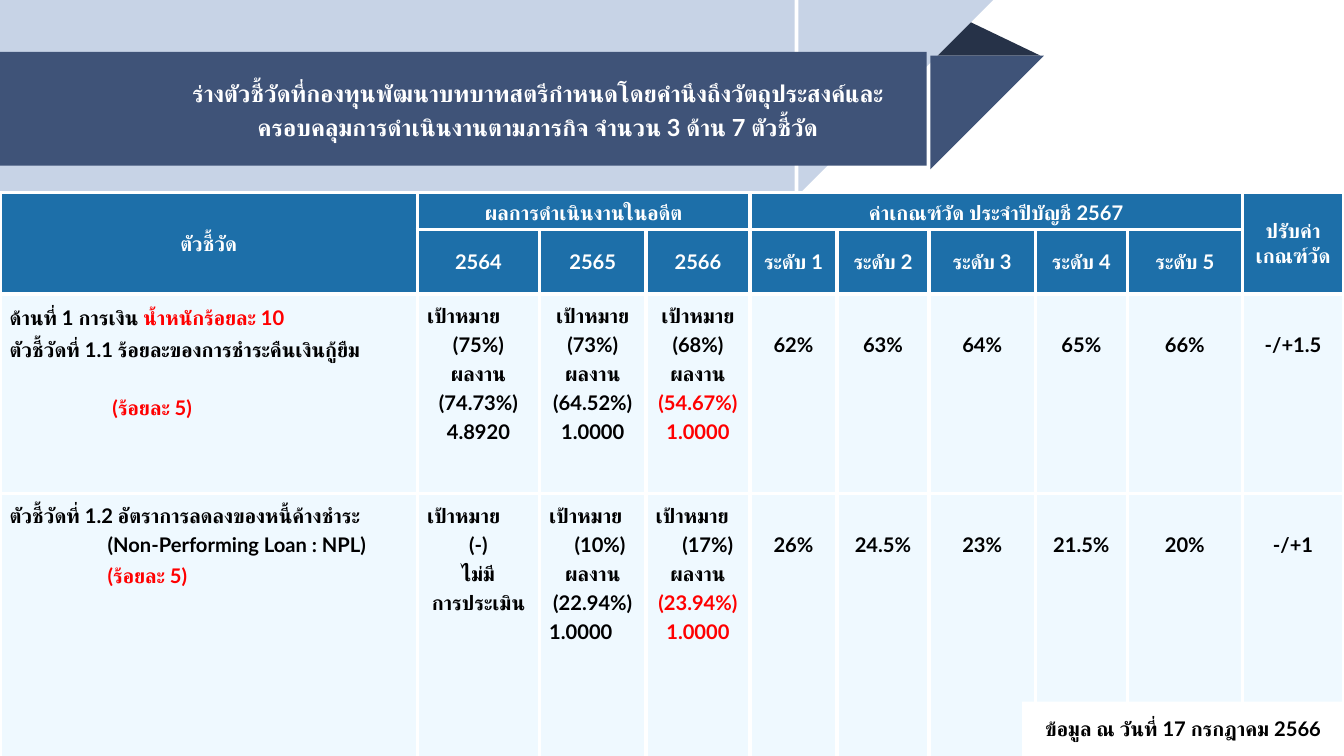
from dataclasses import dataclass

from lxml import etree
from pptx import Presentation
from pptx.dml.color import RGBColor
from pptx.enum.shapes import MSO_SHAPE
from pptx.enum.text import MSO_ANCHOR, PP_ALIGN
from pptx.oxml.ns import qn
from pptx.util import Inches, Pt

RECTANGLE = MSO_SHAPE.RECTANGLE
TRIANGLE = MSO_SHAPE.ISOSCELES_TRIANGLE
RIGHT_TRIANGLE = MSO_SHAPE.RIGHT_TRIANGLE
LEFT, CENTER = PP_ALIGN.LEFT, PP_ALIGN.CENTER
TOP, MIDDLE, BOTTOM = MSO_ANCHOR.TOP, MSO_ANCHOR.MIDDLE, MSO_ANCHOR.BOTTOM


@dataclass(frozen=True)
class Theme:
    font: str = "Lato"
    title_size: int = 14
    body_size: int = 12
    border_width: float = 2.25
    white: str = "FFFFFF"
    black: str = "000000"
    red: str = "FF0000"
    pale_blue: str = "C7D3E6"
    banner_blue: str = "3F5378"
    fold_blue: str = "263248"
    header_blue: str = "1D6FA9"
    cell_blue: str = "EFF9FF"


THEME = Theme()


@dataclass(frozen=True)
class Line:
    text: str
    color: str = THEME.black
    red_tail: str = ""
    align: int = CENTER
    indent: float = 0
    before: int = 0
    spacing: float = 1.2


# The grid has ten columns and ten rows to the inch
def grid(count):
    return Inches(count / 10)


COLUMN_WIDTHS = [34.5, 10.1, 8.8, 8.6, 7.2, 7.6, 8.8, 7.6, 9.5, 8.4]
ROW_HEIGHTS = [3.1, 5.3, 16.5, 21.8]
TABLE_TOP = 15.9
LEVEL_TOP_MARGIN = 2.8

# First row, last row, first column, last column, text, anchor
MERGED_HEADERS = [
    (0, 1, 0, 0, "ตัวชี้วัด", MIDDLE),
    (0, 0, 1, 3, "ผลการดำเนินงานในอดีต", BOTTOM),
    (0, 0, 4, 8, "ค่าเกณฑ์วัด ประจำปีบัญชี 2567", BOTTOM),
    (0, 1, 9, 9, "ปรับค่าเกณฑ์วัด", MIDDLE),
]
SUBHEADERS = ["2564", "2565", "2566"] + [f"ระดับ {level}" for level in range(1, 6)]

TARGET, RESULT = "เป้าหมาย", "ผลงาน"
LEFT_TARGET = Line(TARGET, align=LEFT)


def centered(*texts, color=THEME.black):
    return [Line(text, color) for text in texts]


INDICATORS = [
    (
        [
            Line("ด้านที่ 1 การเงิน ", red_tail="น้ำหนักร้อยละ 10", align=LEFT, spacing=1.3),
            Line("ตัวชี้วัดที่ 1.1 ร้อยละของการชำระคืนเงินกู้ยืม", align=LEFT, spacing=1.3),
            Line("(ร้อยละ 5)", THEME.red, align=LEFT, indent=8.5, before=16, spacing=1.3),
        ],
        [LEFT_TARGET, *centered("(75%)", RESULT, "(74.73%)", "4.8920")],
        centered(TARGET, "(73%)", RESULT, "(64.52%)", "1.0000"),
        centered(TARGET, "(68%)", RESULT) + centered("(54.67%)", "1.0000", color=THEME.red),
        ["62%", "63%", "64%", "65%", "66%", "-/+1.5"],
    ),
    (
        [
            Line("ตัวชี้วัดที่ 1.2 อัตราการลดลงของหนี้ค้างชำระ", align=LEFT),
            Line("(Non-Performing Loan : NPL)", align=LEFT, indent=8.1),
            Line("(ร้อยละ 5)", THEME.red, align=LEFT, indent=8.1, spacing=1.3),
        ],
        [LEFT_TARGET, *centered("(-)", "ไม่มี", "การประเมิน")],
        [LEFT_TARGET, Line("(10%)", align=LEFT, indent=2.1),
         *centered(RESULT, "(22.94%)"), Line("1.0000", align=LEFT)],
        [LEFT_TARGET, Line("(17%)", align=LEFT, indent=2.2), *centered(RESULT),
         *centered("(23.94%)", "1.0000", color=THEME.red)],
        ["26%", "24.5%", "23%", "21.5%", "20%", "-/+1"],
    ),
]


def format_run(run, color, size):
    run.font.name = THEME.font
    run.font.size = Pt(size)
    run.font.bold = True
    run.font.color.rgb = RGBColor.from_string(color)
    # Thai text takes its typeface from the complex-script setting
    etree.SubElement(run.font._element, qn("a:cs"), typeface=THEME.font)


def write_lines(text_frame, lines, size=THEME.body_size):
    for index, line in enumerate(lines):
        paragraph = text_frame.add_paragraph() if index else text_frame.paragraphs[0]
        paragraph.text = line.text
        paragraph.alignment = line.align
        paragraph.line_spacing = line.spacing
        if line.before:
            paragraph.space_before = Pt(line.before)
        if line.indent:
            properties = paragraph._p.get_or_add_pPr()
            properties.set("marL", str(grid(line.indent)))
            properties.set("indent", "0")
        format_run(paragraph.runs[0], line.color, size)
        if line.red_tail:
            tail = paragraph.add_run()
            tail.text = line.red_tail
            format_run(tail, THEME.red, size)


def add_block(slide, kind, left, top, width, height, color, rotation=0):
    shape = slide.shapes.add_shape(kind, grid(left), grid(top), grid(width), grid(height))
    shape.shadow.inherit = False
    shape.fill.solid()
    shape.fill.fore_color.rgb = RGBColor.from_string(color)
    shape.line.fill.background()
    shape.rotation = rotation
    return shape


def style_cell(cell, color):
    properties = cell._tc.get_or_add_tcPr()
    for side in ("a:lnL", "a:lnR", "a:lnT", "a:lnB"):
        border = etree.SubElement(properties, qn(side), w=str(Pt(THEME.border_width)))
        fill = etree.SubElement(border, qn("a:solidFill"))
        etree.SubElement(fill, qn("a:srgbClr"), val=THEME.white)
    cell.fill.solid()
    cell.fill.fore_color.rgb = RGBColor.from_string(color)
    cell.margin_left = cell.margin_right = grid(0.8)
    cell.margin_top = cell.margin_bottom = grid(0.4)


def write_cell(cell, lines, anchor=TOP):
    cell.vertical_anchor = anchor
    write_lines(cell.text_frame, lines)


def add_banner(slide):
    fold = add_block(slide, TRIANGLE, 76.5, 1.5, 9.5, 3.1, THEME.fold_blue)
    fold.adjustments[0] = 0.32
    # Each band is a rectangle with a right triangle as its tip
    add_block(slide, RECTANGLE, -0.3, -0.3, 66, 16.1, THEME.pale_blue)
    add_block(slide, RIGHT_TRIANGLE, 66, 0, 16.1, 16.1, THEME.pale_blue, 90)
    add_block(slide, RECTANGLE, 0, 4.3, 76.6, 9.4, THEME.banner_blue)
    add_block(slide, RIGHT_TRIANGLE, 76.9, 4.6, 9.4, 9.4, THEME.banner_blue, 90)


def add_title(slide, text):
    box = slide.shapes.add_textbox(grid(13.9), grid(4.3), grid(61.1), grid(9.2))
    text_frame = box.text_frame
    text_frame.word_wrap = True
    text_frame.vertical_anchor = MIDDLE
    text_frame.margin_left = text_frame.margin_right = grid(0.8)
    text_frame.margin_top = text_frame.margin_bottom = grid(0.8)
    write_lines(text_frame, [Line(text, THEME.white)], THEME.title_size)


def add_indicator_table(slide):
    table = slide.shapes.add_table(
        len(ROW_HEIGHTS), len(COLUMN_WIDTHS), 0, grid(TABLE_TOP),
        grid(sum(COLUMN_WIDTHS)), grid(sum(ROW_HEIGHTS))).table
    for column, width in zip(table.columns, COLUMN_WIDTHS):
        column.width = grid(width)
    for index, (row, height) in enumerate(zip(table.rows, ROW_HEIGHTS)):
        row.height = grid(height)
        for cell in row.cells:
            style_cell(cell, THEME.header_blue if index < 2 else THEME.cell_blue)
    # Headers
    for first_row, last_row, first, last, text, anchor in MERGED_HEADERS:
        cell = table.cell(first_row, first)
        cell.merge(table.cell(last_row, last))
        write_cell(cell, [Line(text, THEME.white, spacing=1)], anchor)
    for column, text in enumerate(SUBHEADERS, 1):
        write_cell(table.cell(1, column), [Line(text, THEME.white, spacing=1)], MIDDLE)
    # Indicators, past results and levels
    for row, (*descriptions, levels) in enumerate(INDICATORS, 2):
        for column, lines in enumerate(descriptions):
            write_cell(table.cell(row, column), lines)
        for column, level in enumerate(levels, len(descriptions)):
            cell = table.cell(row, column)
            cell.margin_top = grid(LEVEL_TOP_MARGIN)
            write_cell(cell, centered(level))


def add_date_note(slide, text):
    note = add_block(slide, RECTANGLE, 84.5, 58, 26.6, 4.5, THEME.white)
    note.text_frame.word_wrap = True
    note.text_frame.vertical_anchor = MIDDLE
    write_lines(note.text_frame, [Line(text, spacing=1)])


def main():
    presentation = Presentation()
    presentation.slide_width, presentation.slide_height = grid(111.1), grid(62.5)
    slide = presentation.slides.add_slide(presentation.slide_layouts[6])
    add_banner(slide)
    add_indicator_table(slide)
    add_title(slide, "ร่างตัวชี้วัดที่กองทุนพัฒนาบทบาทสตรีกำหนดโดยคำนึงถึงวัตถุประสงค์และ"
                     "ครอบคลุมการดำเนินงานตามภารกิจ จำนวน 3 ด้าน 7 ตัวชี้วัด")
    add_date_note(slide, "ข้อมูล ณ วันที่ 17 กรกฎาคม 2566")
    presentation.save("out.pptx")


if __name__ == "__main__":
    main()
